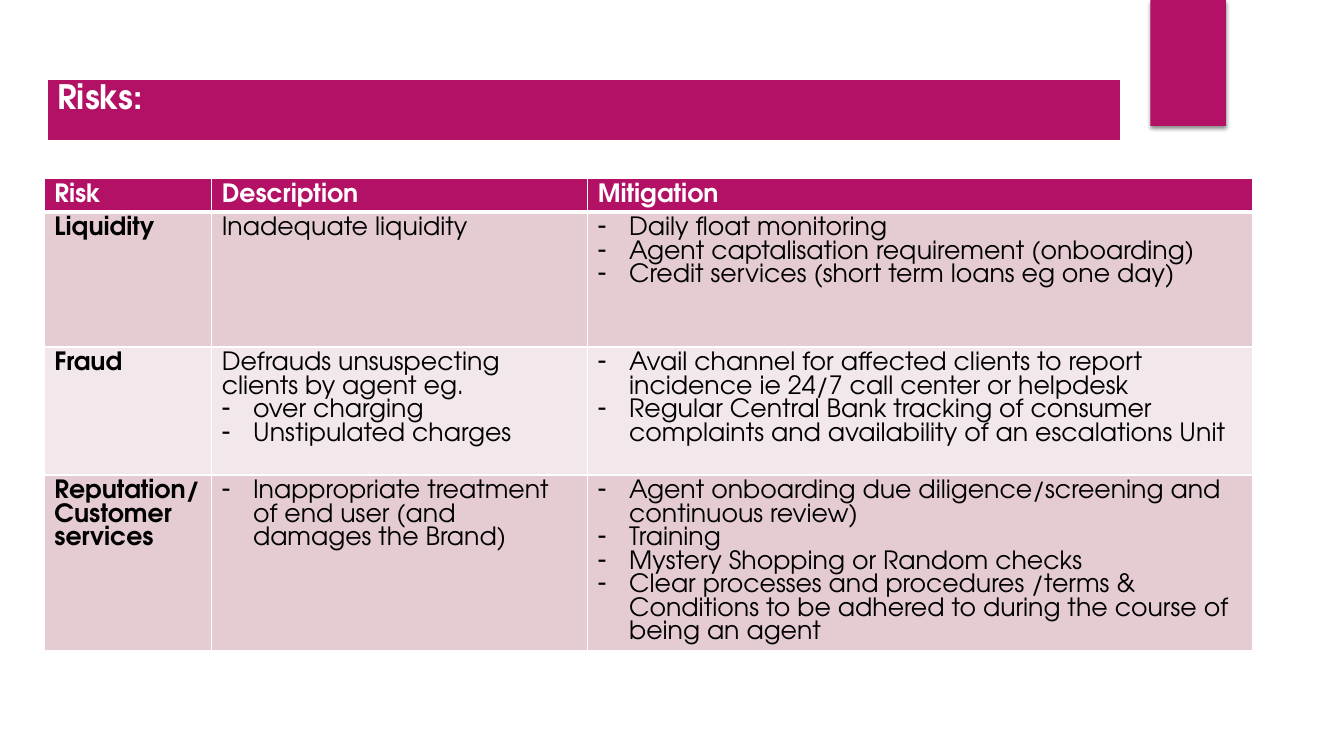
from dataclasses import dataclass

import pptx
import pptx.dml.color
import pptx.enum.shapes
import pptx.oxml
import pptx.oxml.ns
import pptx.util
from pptx.util import Inches

FONT = "TeX Gyre Adventor"
COLORS = {
    "accent": "B31166",
    "band_dark": "E5CCD3",
    "band_light": "F2E7EA",
    "white": "FFFFFF",
    "black": "000000",
}
INDENT = Inches(0.31)
BULLET = "- "  # marks a line of cell text that is drawn as a bulleted item


@dataclass
class RiskRow:
    height: float
    fill: str
    risk: list[str]
    description: list[str]
    mitigation: list[str]


RISKS = [
    RiskRow(1.34, "band_dark", ["Liquidity"], ["Inadequate liquidity"],
            ["- Daily float monitoring",
             "- Agent captalisation requirement (onboarding)",
             "- Credit services (short term loans eg one day)"]),
    RiskRow(1.27, "band_light", ["Fraud"],
            ["Defrauds unsuspecting clients by agent eg.",
             "- over charging",
             "- Unstipulated charges"],
            ["- Avail channel for affected clients to report incidence ie 24/7 "
             "call center or helpdesk",
             "- Regular Central Bank tracking of consumer complaints and "
             "availability of an escalations Unit"]),
    RiskRow(1.74, "band_dark", ["Reputation/", "Customer services"],
            ["- Inappropriate treatment of end user (and damages the Brand)"],
            ["- Agent onboarding due diligence/screening and continuous review)",
             "- Training",
             "- Mystery Shopping or Random checks",
             "- Clear processes and procedures /terms & Conditions to be adhered "
             "to during the course of being an agent"]),
]
HEADINGS = ["Risk", "Description", "Mitigation"]
HEADING_HEIGHT = 0.33
COLUMN_WIDTHS = [1.66, 3.73, 6.59]


def rgb(color: str) -> pptx.dml.color.RGBColor:
    return pptx.dml.color.RGBColor.from_string(COLORS[color])


def xml(markup: str):
    """Parse one DrawingML element whose tag starts with a:."""
    tag_end = min(i for i in (markup.find(" "), markup.find(">"), markup.find("/>")) if i > 0)
    namespace = pptx.oxml.ns.nsdecls("a")
    return pptx.oxml.parse_xml(f"{markup[:tag_end]} {namespace}{markup[tag_end:]}")


def write(frame, lines: list[str], *, size: float = 18, color: str = "black",
          bold: bool = False) -> None:
    for number, line in enumerate(lines):
        paragraph = frame.paragraphs[0] if number == 0 else frame.add_paragraph()
        if line.startswith(BULLET):
            properties = paragraph._p.get_or_add_pPr()
            properties.set("marL", str(INDENT))
            properties.set("indent", str(-INDENT))
            properties.append(xml('<a:buChar char="-"/>'))
        run = paragraph.add_run()
        run.text = line.removeprefix(BULLET)
        run.font.name = FONT
        run.font.size = pptx.util.Pt(size)
        run.font.bold = bold
        run.font.color.rgb = rgb(color)


def style_cell(cell, fill: str, top: float = 1, bottom: float = 1) -> None:
    """Fill a cell and give it white borders, widths in points."""
    properties = cell._tc.get_or_add_tcPr()
    for side, width in {"L": 1, "R": 1, "T": top, "B": bottom}.items():
        properties.append(xml(
            f'<a:ln{side} w="{pptx.util.Pt(width)}"><a:solidFill>'
            f'<a:srgbClr val="{COLORS["white"]}"/></a:solidFill></a:ln{side}>'))
    cell.fill.solid()
    cell.fill.fore_color.rgb = rgb(fill)


def add_grid(slide, left: float, top: float, widths: list[float], heights: list[float]):
    """Add a table without the banding of its default style."""
    table = slide.shapes.add_table(
        len(heights), len(widths), Inches(left), Inches(top),
        Inches(sum(widths)), Inches(sum(heights))).table
    table.first_row = table.horz_banding = False
    for column, width in zip(table.columns, widths):
        column.width = Inches(width)
    for row, height in zip(table.rows, heights):
        row.height = Inches(height)
    return table


def add_corner_tab(slide) -> None:
    tab = slide.shapes.add_shape(
        pptx.enum.shapes.MSO_SHAPE.RECTANGLE,
        Inches(11.41), Inches(0), Inches(0.75), Inches(1.25))
    tab.fill.solid()
    tab.fill.fore_color.rgb = rgb("accent")
    tab.line.fill.background()
    tab.shadow.inherit = False
    tab._element.spPr.find(pptx.oxml.ns.qn("a:effectLst")).append(xml(
        f'<a:outerShdw blurRad="{pptx.util.Pt(3)}" dist="{pptx.util.Pt(2)}" dir="5400000" '
        f'rotWithShape="0"><a:srgbClr val="{COLORS["black"]}"><a:alpha val="45000"/>'
        '</a:srgbClr></a:outerShdw>'))


def add_risk_table(slide) -> None:
    heights = [HEADING_HEIGHT] + [risk.height for risk in RISKS]
    table = add_grid(slide, 0.44, 1.77, COLUMN_WIDTHS, heights)
    for column, heading in enumerate(HEADINGS):
        cell = table.cell(0, column)
        style_cell(cell, "accent", bottom=3)
        write(cell.text_frame, [heading], color="white", bold=True)
    for number, risk in enumerate(RISKS, start=1):
        for column, lines in enumerate([risk.risk, risk.description, risk.mitigation]):
            cell = table.cell(number, column)
            style_cell(cell, risk.fill, top=3 if number == 1 else 1)
            write(cell.text_frame, lines, bold=column == 0)


def add_title(slide) -> None:
    cell = add_grid(slide, 0.47, 0.79, [10.64], [0.62]).cell(0, 0)
    style_cell(cell, "accent", bottom=3)
    write(cell.text_frame, ["Risks:"], size=24, color="white", bold=True)


def main() -> None:
    presentation = pptx.Presentation()
    presentation.slide_width = Inches(13.33)
    presentation.slide_height = Inches(7.5)
    slide = presentation.slides.add_slide(presentation.slide_layouts[6])
    add_corner_tab(slide)
    add_risk_table(slide)
    add_title(slide)
    presentation.save("out.pptx")


if __name__ == "__main__":
    main()
